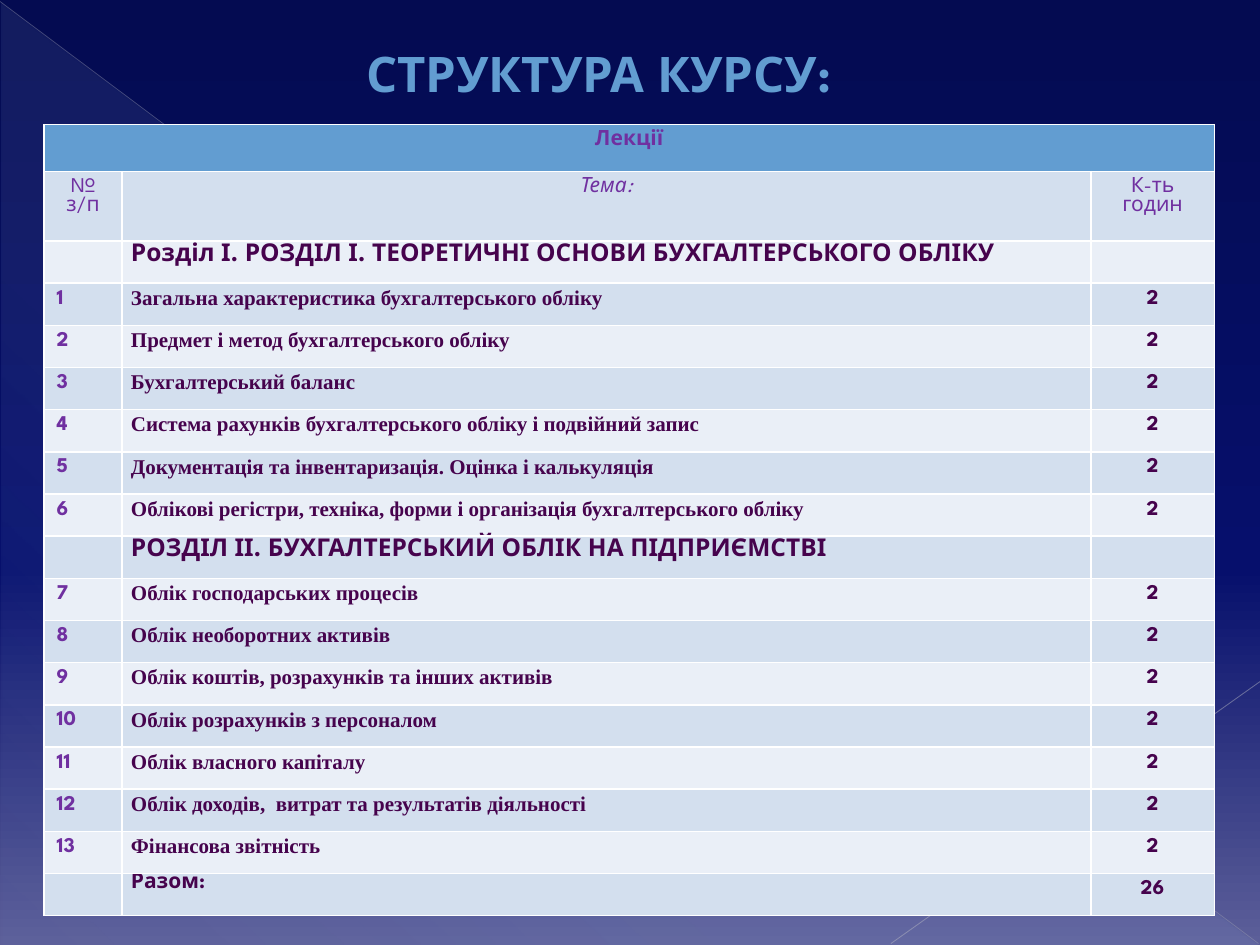
"""Build the course structure slide with its table of lectures."""
from dataclasses import dataclass

from lxml import etree
from pptx import Presentation
from pptx import util as u
from pptx.dml.color import RGBColor
from pptx.enum import shapes, text
from pptx.oxml.ns import qn

COLORS = {
    "accent": "629DD1", "purple": "7030A0", "plum": "46034D", "white": "FFFFFF",
    "band": "D3DFEE", "light": "EAEFF7", "glow": "ACCBF9",
    "top": "040B51", "middle": "060F6C", "bottom": "5C5F99",
    "long": "B2B3BE", "short": "BBBCC5",
}
SANS, SERIF = "League Spartan", "Times New Roman"
CENTER = text.PP_ALIGN.CENTER
SECTIONS = {
    "Розділ І. РОЗДІЛ І. ТЕОРЕТИЧНІ ОСНОВИ БУХГАЛТЕРСЬКОГО ОБЛІКУ": [
        "Загальна характеристика бухгалтерського обліку",
        "Предмет і метод бухгалтерського обліку",
        "Бухгалтерський баланс",
        "Система рахунків бухгалтерського обліку і подвійний запис",
        "Документація та інвентаризація. Оцінка і калькуляція",
        "Облікові регістри, техніка, форми і організація бухгалтерського обліку",
    ],
    "РОЗДІЛ ІІ. БУХГАЛТЕРСЬКИЙ ОБЛІК НА ПІДПРИЄМСТВІ": [
        "Облік господарських процесів",
        "Облік необоротних активів",
        "Облік коштів, розрахунків та інших активів",
        "Облік розрахунків з персоналом",
        "Облік власного капіталу",
        "Облік доходів,  витрат та результатів діяльності",
        "Фінансова звітність",
    ],
}
HOURS = 2
COLUMNS = (1.57, 19.53, 2.49)
HEAD_ROWS, ROW = (0.95, 1.4), 0.85


@dataclass
class Entry:
    words: str = ""
    color: str = "plum"
    font: str = SANS
    size: int = 12
    bold: bool = True
    italic: bool = False
    align: text.PP_ALIGN | None = None
    spacing: float | None = None
    tight: bool = False


@dataclass
class Ray:
    start: tuple[float, float]
    end: tuple[float, float]
    color: str
    width: float
    alpha: int


def rgb(name: str) -> RGBColor:
    return RGBColor.from_string(COLORS[name])


def set_alpha(color, percent: int) -> None:
    etree.SubElement(color, qn("a:alpha"), val=str(percent * 1000))


def set_gradient(fill, owner, stops, angle: int) -> None:
    fill.gradient()
    grad = owner.find(".//" + qn("a:gradFill"))
    grad.find(qn("a:lin")).set("ang", str(angle * 60000))
    stop_list = grad.find(qn("a:gsLst"))
    for stop in list(stop_list):
        stop_list.remove(stop)
    for pos, name, alpha in stops:
        stop = etree.SubElement(stop_list, qn("a:gs"), pos=str(pos * 1000))
        color = etree.SubElement(stop, qn("a:srgbClr"), val=COLORS[name])
        if alpha < 100:
            set_alpha(color, alpha)


def draw_ray(s, ray: Ray) -> None:
    points = [u.Cm(v) for v in (*ray.start, *ray.end)]
    line = s.shapes.add_connector(shapes.MSO_CONNECTOR.STRAIGHT, *points)
    line.line.color.rgb = rgb(ray.color)
    line.line.width = u.Pt(ray.width)
    props = line._element.spPr
    set_alpha(props.find(".//" + qn("a:srgbClr")), ray.alpha)
    etree.SubElement(props, qn("a:effectLst"))


def write(p, entry: Entry) -> None:
    p.alignment, p.line_spacing = entry.align, entry.spacing
    if not entry.words:
        etree.SubElement(p._p, qn("a:endParaRPr"), sz=str(entry.size * 100))
        return
    r = p.add_run()
    r.text = entry.words
    formats = {"name": entry.font, "size": u.Pt(entry.size),
               "bold": entry.bold, "italic": entry.italic}
    for key, value in formats.items():
        setattr(r.font, key, value)
    r.font.color.rgb = rgb(entry.color)


def add_borders(cell) -> None:
    props = cell._tc.get_or_add_tcPr()
    for i, side in enumerate(("lnL", "lnR", "lnT", "lnB")):
        line = etree.Element(qn("a:" + side), w=str(u.Pt(1)))
        fill = etree.SubElement(line, qn("a:solidFill"))
        etree.SubElement(fill, qn("a:srgbClr"), val=COLORS["white"])
        props.insert(i, line)


def fill_cell(cell, entry: Entry, color: str) -> None:
    cell.fill.solid()
    cell.fill.fore_color.rgb = rgb(color)
    if entry.tight:
        margins = {"left": 0.18, "right": 0.18, "top": 0, "bottom": 0}
        for side, value in margins.items():
            setattr(cell, "margin_" + side, u.Cm(value))
    write(cell.text_frame.paragraphs[0], entry)
    add_borders(cell)


def table_rows() -> list[list[Entry]]:
    head = {"color": "purple", "align": CENTER}
    rows = [
        [Entry("Лекції", **head), Entry(), Entry()],
        [Entry("№ з/п", bold=False, **head),
         Entry("Тема:", bold=False, italic=True, **head),
         Entry("К-ть годин", bold=False, **head)],
    ]
    number = 0
    for section, topics in SECTIONS.items():
        rows.append([Entry(), Entry(section, size=14, spacing=1.15, tight=True), Entry()])
        for topic in topics:
            number += 1
            rows.append([Entry(str(number), "purple"),
                         Entry(topic, font=SERIF, spacing=1.15, tight=True),
                         Entry(str(HOURS), align=CENTER)])
    rows.append([Entry(), Entry("Разом:", tight=True),
                 Entry(str(number * HOURS), align=CENTER)])
    return rows


def draw_table(s) -> None:
    rows = table_rows()
    heights = [*HEAD_ROWS, *[ROW] * (len(rows) - len(HEAD_ROWS))]
    box = (0.89, 2.51, sum(COLUMNS), sum(heights))
    table = s.shapes.add_table(len(rows), len(COLUMNS), *map(u.Cm, box)).table
    for column, width in zip(table.columns, COLUMNS):
        column.width = u.Cm(width)
    for i, (entries, height) in enumerate(zip(rows, heights)):
        table.rows[i].height = u.Cm(height)
        color = "accent" if i == 0 else "band" if i % 2 else "light"
        for j, entry in enumerate(entries):
            fill_cell(table.cell(i, j), entry, color)
    table.cell(0, 0).merge(table.cell(0, len(COLUMNS) - 1))


def draw_backdrop(s) -> None:
    set_gradient(s.background.fill, s._element,
                 [(0, "top", 100), (60, "middle", 100), (100, "bottom", 100)], 90)
    sp = s.shapes.add_shape(shapes.MSO_SHAPE.RIGHT_TRIANGLE,
                            *map(u.Cm, (0.03, 0.05, 25.35, 19)))
    sp.shadow.inherit = False
    sp.line.fill.background()
    set_gradient(sp.fill, sp._element,
                 [(0, "glow", 10), (70, "glow", 8), (100, "glow", 1)], 133)
    for ray in (Ray((0, 0.03), (25.37, 19.02), "long", 0.39, 35),
                Ray((25.4, 13.74), (17.96, 19.02), "short", 0.47, 45)):
        draw_ray(s, ray)


def draw_title(s) -> None:
    title = s.shapes.title
    s.shapes._spTree.append(title._element)
    box = {"left": 5.72, "top": 0.74, "width": 12.7, "height": 1.45}
    for key, value in box.items():
        setattr(title, key, u.Cm(value))
    tf = title.text_frame
    formats = {"word_wrap": True, "auto_size": text.MSO_AUTO_SIZE.SHAPE_TO_FIT_TEXT,
               "vertical_anchor": text.MSO_ANCHOR.TOP}
    for key, value in formats.items():
        setattr(tf, key, value)
    write(tf.paragraphs[0], Entry("СТРУКТУРА КУРСУ:", "accent", size=28, align=CENTER))


def main() -> None:
    prs = Presentation()
    prs.slide_width, prs.slide_height = u.Cm(25.4), u.Cm(19.05)
    s = prs.slides.add_slide(prs.slide_layouts[5])
    draw_backdrop(s)
    draw_title(s)
    draw_table(s)
    prs.save("out.pptx")


if __name__ == "__main__":
    main()
